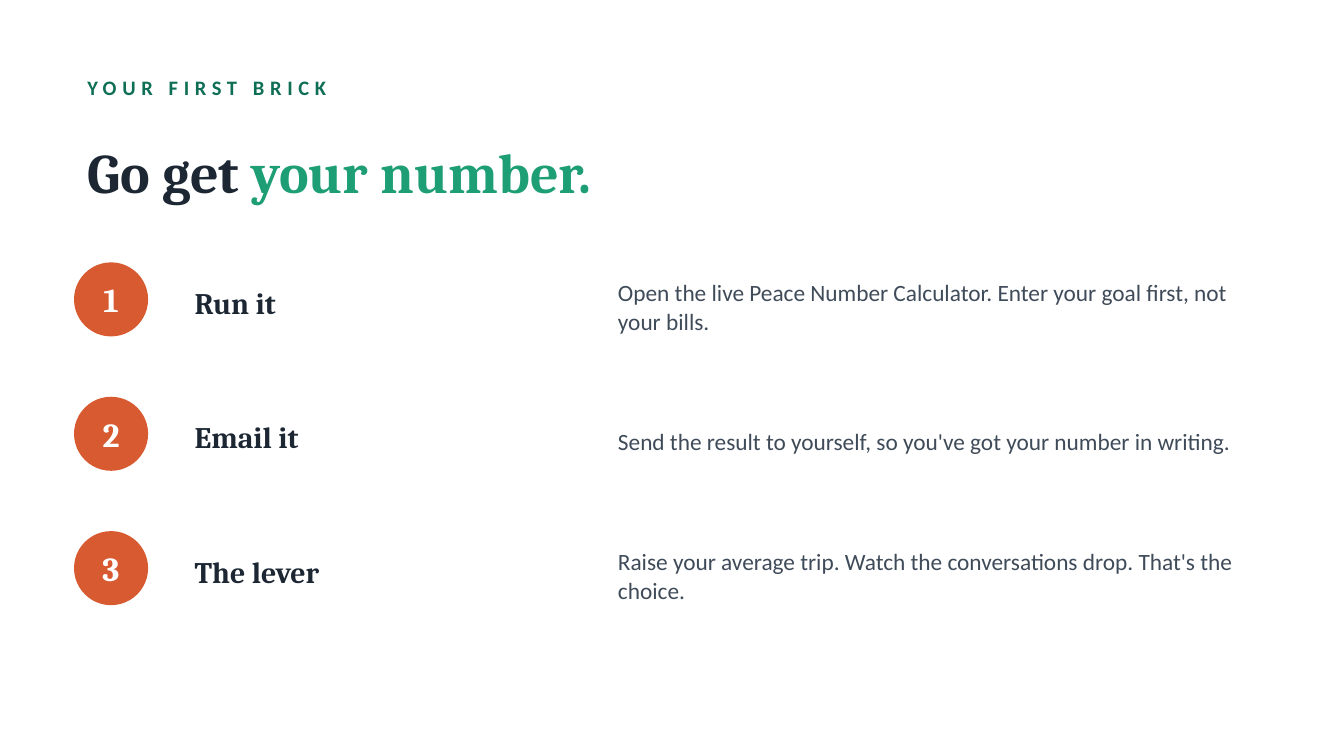
from pptx import Presentation
from pptx.dml.color import RGBColor
from pptx.enum.shapes import MSO_SHAPE
from pptx.enum.text import MSO_ANCHOR, MSO_AUTO_SIZE, PP_ALIGN
from pptx.util import Cm, Pt

OVAL = MSO_SHAPE.OVAL
MIDDLE = MSO_ANCHOR.MIDDLE
NO_AUTOFIT = MSO_AUTO_SIZE.NONE
LEFT, CENTER = PP_ALIGN.LEFT, PP_ALIGN.CENTER

WHITE = RGBColor(0xFF, 0xFF, 0xFF)
INK = RGBColor(0x1C, 0x27, 0x33)
SLATE = RGBColor(0x3F, 0x4B, 0x59)
DARK_GREEN = RGBColor(0x0F, 0x6E, 0x56)
GREEN = RGBColor(0x1D, 0x9E, 0x75)
ORANGE = RGBColor(0xD8, 0x5A, 0x30)

SERIF, SANS = "Cambria", "Calibri"
TITLE_ONLY = 5

STEPS = [
    ("Run it", "Open the live Peace Number Calculator. Enter your goal first, not your bills."),
    ("Email it", "Send the result to yourself, so you've got your number in writing."),
    ("The lever", "Raise your average trip. Watch the conversations drop. That's the choice."),
]


def format_run(run, size, font_name, color, bold=True):
    run.font.size = Pt(size)
    run.font.name = font_name
    run.font.color.rgb = color
    run.font.bold = bold


def add_label(slide, box, text, size, font_name, color, bold=True):
    label = slide.shapes.add_textbox(*box)
    frame = label.text_frame
    frame.word_wrap = True
    frame.vertical_anchor = MIDDLE
    frame.text = text
    paragraph = frame.paragraphs[0]
    format_run(paragraph.runs[0], size, font_name, color, bold)
    return paragraph


def add_heading(slide, left, top, width):
    eyebrow = add_label(slide, (left, top, width, Cm(0.76)),
                        "YOUR FIRST BRICK", 11, SANS, DARK_GREEN)
    eyebrow.runs[0].font._element.set("spc", "300")

    title = slide.shapes.title
    title.left, title.top = left, top + Cm(0.89)
    title.width, title.height = width, Cm(2.16)
    frame = title.text_frame
    frame.auto_size = NO_AUTOFIT
    frame.word_wrap = True
    frame.vertical_anchor = MIDDLE
    paragraph = frame.paragraphs[0]
    paragraph.alignment = LEFT
    for text, color in (("Go get ", INK), ("your number.", GREEN)):
        run = paragraph.add_run()
        run.text = text
        format_run(run, 30, SERIF, color)


def add_step(slide, left, top, number, name, detail):
    diameter = Cm(1.4)
    badge = slide.shapes.add_shape(OVAL, left, top + Cm(0.13), diameter, diameter)
    badge.shadow.inherit = False
    badge.fill.solid()
    badge.fill.fore_color.rgb = ORANGE
    badge.line.fill.background()
    frame = badge.text_frame
    frame.margin_left = frame.margin_right = 0
    frame.margin_top = frame.margin_bottom = 0
    frame.vertical_anchor = MIDDLE
    frame.text = str(number)
    frame.paragraphs[0].alignment = CENTER
    format_run(frame.paragraphs[0].runs[0], 18, SERIF, WHITE)

    add_label(slide, (left + Cm(2.03), top, Cm(7.62), Cm(1.78)), name, 16, SERIF, INK)
    description = add_label(slide, (left + Cm(10.03), top, Cm(12.7), Cm(1.91)),
                            detail, 12.5, SANS, SLATE, bold=False)
    description.line_spacing = 1.05


def add_steps(slide, left, top, pitch):
    for index, (name, detail) in enumerate(STEPS):
        add_step(slide, left, top + index * pitch, index + 1, name, detail)


def main():
    deck = Presentation()
    deck.slide_width, deck.slide_height = Cm(25.4), Cm(14.29)
    slide = deck.slides.add_slide(deck.slide_layouts[TITLE_ONLY])
    slide.background.fill.solid()
    slide.background.fill.fore_color.rgb = WHITE
    margin = Cm(1.4)
    add_heading(slide, margin, Cm(1.27), Cm(22.6))
    add_steps(slide, margin, Cm(4.83), Cm(2.54))
    deck.save("out.pptx")


if __name__ == "__main__":
    main()
